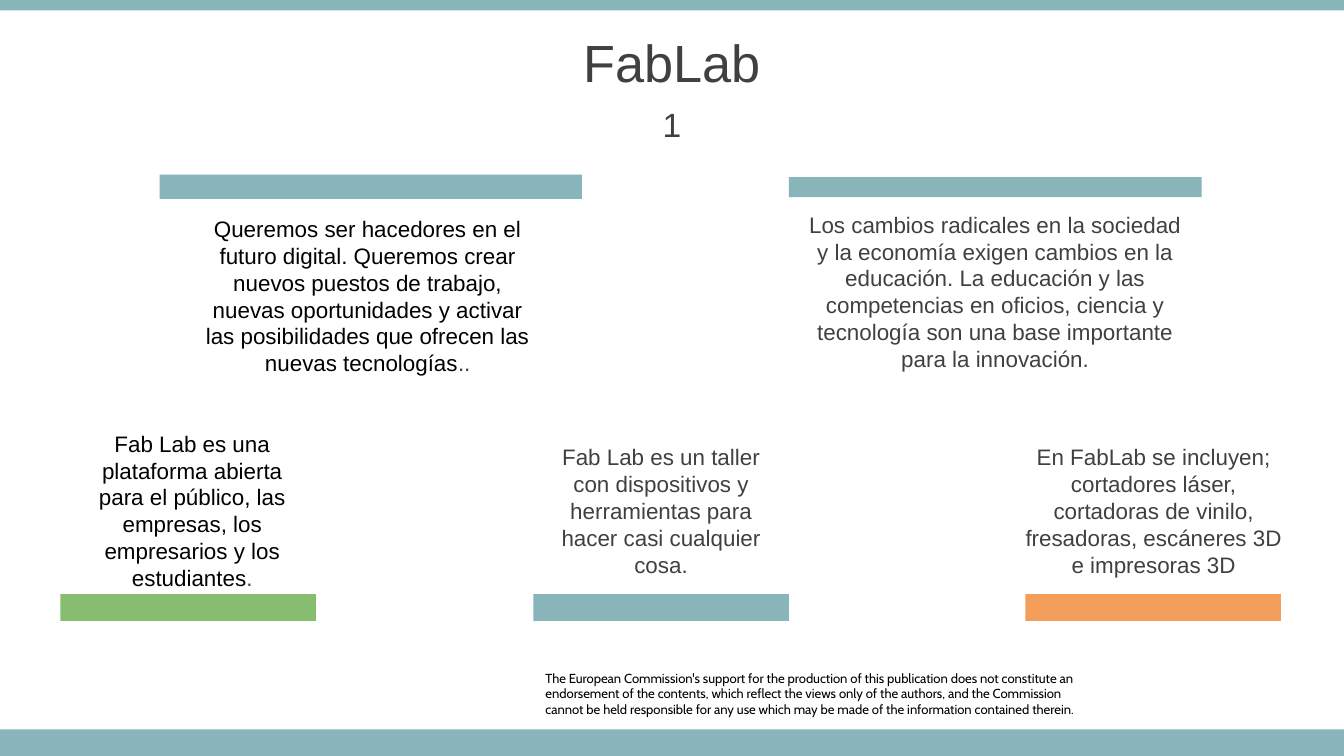
from pptx import Presentation
from pptx.dml.color import RGBColor
from pptx.enum.shapes import MSO_SHAPE
from pptx.enum.text import MSO_ANCHOR, PP_ALIGN
from pptx.util import Cm, Pt

RECT = MSO_SHAPE.RECTANGLE
TOP, MIDDLE = MSO_ANCHOR.TOP, MSO_ANCHOR.MIDDLE
LEFT, CENTER = PP_ALIGN.LEFT, PP_ALIGN.CENTER

THEME = {
    "teal": "87B5BA", "green": "86BD70", "orange": "F39E5A",
    "black": "000000", "grey": "404040",
    "title": {"name": "Arial", "size": Pt(28)},
    "subtitle": {"name": "Arial", "size": Pt(18)},
    "body": {"name": "Arial", "size": Pt(12)},
    "legal": {"name": "Cabin", "size": Pt(7)},
}

WIDTH, HEIGHT = 25.4, 14.29
FOOTER_TOP, HEADER_H = 13.79, 0.2
LOWER_BAR = {"top": 11.23, "width": 4.83, "height": 0.51}

HEADINGS = [
    ("FabLab", "title", 0.36, 1.6),
    ("1", "subtitle", 1.96, 0.79),
]

DISCLAIMER = [
    [("The European Commission's support for the production of this publication does not "
      "constitute an endorsement of the contents, which reflect the views only of the "
      "authors, and the Commission", "black")],
    [("cannot be held responsible for any use which may be made of the information "
      "contained therein.", "black")],
]

UPPER_CARDS = [
    ([("Queremos ser hacedores en el futuro digital. Queremos crear nuevos puestos de "
       "trabajo, nuevas oportunidades y activar las posibilidades que ofrecen las nuevas "
       "tecnologías", "black"), ("..", "grey")],
     (3.61, 3.94, 6.68, 3.33), (3.02, 3.3, 7.98, 0.46), "teal"),
    ([("Los cambios radicales en la sociedad y la economía exigen cambios en la educación. "
       "La educación y las competencias en oficios, ciencia y tecnología son una base "
       "importante para la innovación.", "grey")],
     (14.91, 3.86, 7.8, 3.33), (14.91, 3.35, 7.8, 0.38), "teal"),
]

LOWER_CARDS = [
    ([("Fab Lab es una plataforma abierta para el público, las empresas, los empresarios "
       "y los estudiantes", "black"), (".", "grey")],
     (1.22, 8, 4.83, 3.33), 1.14, "green"),
    ([("Fab Lab es un taller con dispositivos y herramientas para hacer casi cualquier "
       "cosa.", "grey")],
     (10.08, 8.26, 4.83, 2.82), 10.08, "teal"),
    ([("En FabLab se incluyen; cortadores láser, cortadoras de vinilo, fresadoras, "
       "escáneres 3D e impresoras 3D", "grey")],
     (19.05, 8.26, 5.51, 2.82), 19.38, "orange"),
]


def add_bar(s, box, color):
    sp = s.shapes.add_shape(RECT, *map(Cm, box))
    sp.shadow.inherit = False
    sp.fill.solid()
    sp.fill.fore_color.rgb = RGBColor.from_string(THEME[color])
    sp.line.fill.background()


def add_text(s, box, paragraphs, style, align=CENTER, **frame):
    tf = s.shapes.add_textbox(*map(Cm, box)).text_frame
    for key, value in {"word_wrap": True, "vertical_anchor": TOP, **frame}.items():
        setattr(tf, key, value)
    for i, runs in enumerate(paragraphs):
        p = tf.paragraphs[0] if i == 0 else tf.add_paragraph()
        p.alignment = align
        for text, color in runs:
            r = p.add_run()
            r.text = text
            for key, value in THEME[style].items():
                setattr(r.font, key, value)
            r.font.color.rgb = RGBColor.from_string(THEME[color])


def main():
    prs = Presentation()
    prs.slide_width, prs.slide_height = Cm(WIDTH), Cm(HEIGHT)
    s = prs.slides.add_slide(prs.slide_layouts[6])

    no_margins = {f"margin_{side}": 0 for side in ("left", "top", "right", "bottom")}
    add_text(s, (10.31, 12.67, 10.59, 0.89), DISCLAIMER, "legal", LEFT, **no_margins)
    add_bar(s, (0, FOOTER_TOP, WIDTH, HEIGHT - FOOTER_TOP), "teal")
    add_bar(s, (0, 0, WIDTH, HEADER_H), "teal")

    for text, style, top, height in HEADINGS:
        add_text(s, (0, top, WIDTH, height), [[(text, "grey")]], style, vertical_anchor=MIDDLE)

    lower = [(runs, box, (left, *LOWER_BAR.values()), color)
             for runs, box, left, color in LOWER_CARDS]
    for runs, text_box, bar_box, color in UPPER_CARDS + lower:
        add_text(s, text_box, [runs], "body")
        add_bar(s, bar_box, color)

    prs.save("out.pptx")


if __name__ == "__main__":
    main()
